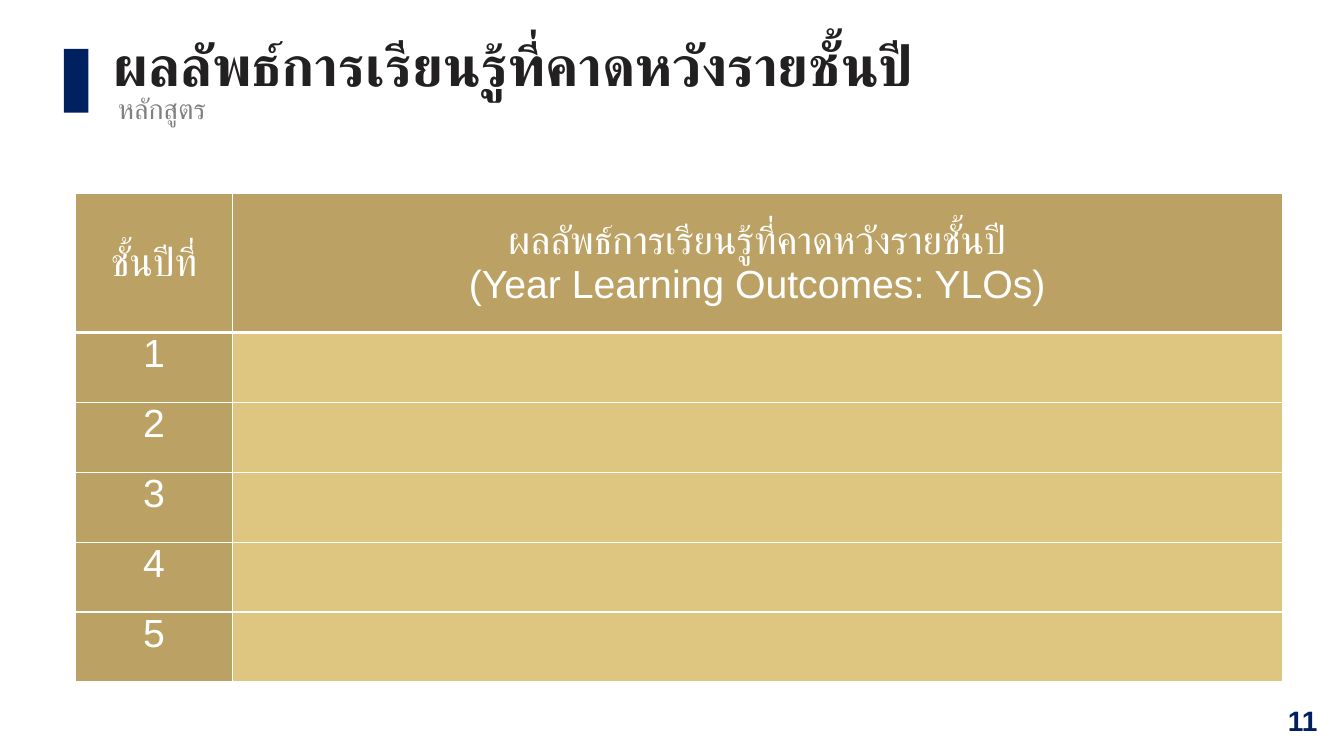
"""Build the yearly learning outcomes slide."""
from lxml import etree
from pptx import Presentation
from pptx.dml.color import RGBColor
from pptx.enum.shapes import MSO_SHAPE
from pptx.enum.text import MSO_ANCHOR, PP_ALIGN
from pptx.oxml.ns import qn
from pptx.util import Cm, Pt

RECTANGLE = MSO_SHAPE.RECTANGLE
TOP, MIDDLE = MSO_ANCHOR.TOP, MSO_ANCHOR.MIDDLE
LEFT, CENTER, RIGHT = PP_ALIGN.LEFT, PP_ALIGN.CENTER, PP_ALIGN.RIGHT

FONT = "Arial"
NAVY, WHITE, BLACK, GRAY = "002060", "FFFFFF", "222020", "808080"
GOLD, LIGHT_GOLD = "BCA164", "DBBF73"

TITLE = "ผลลัพธ์การเรียนรู้ที่คาดหวังรายชั้นปี"
YEARS = range(1, 6)
COLUMN_WIDTHS = (3.94, 26.46)
HEADER_HEIGHT, YEAR_HEIGHT = 3.5, 1.76


def set_color(color_format, color):
    """Apply a hex colour to a fill colour or font colour."""
    color_format.rgb = RGBColor.from_string(color)


def set_fill(fill, color, opacity=100):
    """Make a fill solid, with an opacity in percent."""
    fill.solid()
    set_color(fill.fore_color, color)
    if opacity < 100:
        color_element = fill._xPr.find(qn("a:solidFill"))[0]
        etree.SubElement(color_element, qn("a:alpha"), val=str(opacity * 1000))


def write_lines(text_frame, lines, size, color, align=LEFT, bold=False):
    """Write one paragraph per line, in one font."""
    for index, line in enumerate(lines):
        paragraph = text_frame.add_paragraph() if index else text_frame.paragraphs[0]
        paragraph.alignment = align
        run = paragraph.add_run()
        run.text = line
        run.font.name = FONT
        run.font.size = Pt(size)
        run.font.bold = bold
        set_color(run.font.color, color)
        etree.SubElement(run.font._element, qn("a:cs"), typeface=FONT)


def add_text(slide, box, text, size, color, align=LEFT, anchor=TOP, bold=False):
    """Add a wrapped text box at left, top, width, height."""
    text_frame = slide.shapes.add_textbox(*map(Cm, box)).text_frame
    text_frame.word_wrap = True
    text_frame.vertical_anchor = anchor
    write_lines(text_frame, [text], size, color, align, bold)


def add_bar(slide, box, color):
    """Add a plain rectangle without an outline."""
    shape = slide.shapes.add_shape(RECTANGLE, *map(Cm, box))
    shape.shadow.inherit = False
    set_fill(shape.fill, color)
    shape.line.fill.background()


def set_borders(cell, color, bottom_width=1):
    """Draw the four borders of a table cell."""
    properties = cell._tc.get_or_add_tcPr()
    widths = {"a:lnL": 1, "a:lnR": 1, "a:lnT": 1, "a:lnB": bottom_width}
    for tag, width in widths.items():
        line = etree.SubElement(properties, qn(tag), w=str(Pt(width)))
        solid = etree.SubElement(line, qn("a:solidFill"))
        etree.SubElement(solid, qn("a:srgbClr"), val=color)


def fill_cell(cell, lines, color, anchor=TOP, opacity=100, bottom_width=1):
    """Style a table cell and write its lines."""
    set_borders(cell, WHITE, bottom_width)
    set_fill(cell.fill, color, opacity)
    cell.vertical_anchor = anchor
    cell.margin_left = cell.margin_right = Cm(0.18)
    cell.margin_top = cell.margin_bottom = Cm(0)
    write_lines(cell.text_frame, lines, 28, WHITE, CENTER)


def add_outcomes_table(slide):
    """Add the table with a header and one row per year."""
    row_heights = [HEADER_HEIGHT] + [YEAR_HEIGHT] * len(YEARS)
    table = slide.shapes.add_table(
        len(row_heights), len(COLUMN_WIDTHS), Cm(1.91), Cm(4.88),
        Cm(sum(COLUMN_WIDTHS)), Cm(sum(row_heights))).table
    table.first_row = table.horz_banding = False
    for column, width in zip(table.columns, COLUMN_WIDTHS):
        column.width = Cm(width)
    for row, height in zip(table.rows, row_heights):
        row.height = Cm(height)

    headers = (["ชั้นปีที่"], [TITLE, "(Year Learning Outcomes: YLOs)"])
    for column, lines in enumerate(headers):
        fill_cell(table.cell(0, column), lines, GOLD, MIDDLE, bottom_width=3)
    for year in YEARS:
        fill_cell(table.cell(year, 0), [str(year)], GOLD)
        fill_cell(table.cell(year, 1), [], LIGHT_GOLD, opacity=90)


def main():
    """Build and save the presentation."""
    presentation = Presentation()
    presentation.slide_width, presentation.slide_height = Cm(33.87), Cm(19.05)
    slide = presentation.slides.add_slide(presentation.slide_layouts[6])
    add_bar(slide, (1.61, 1.23, 0.62, 1.61), NAVY)
    add_text(slide, (25.83, 17.65, 7.62, 1.02), "11", 20, NAVY, RIGHT, MIDDLE, bold=True)
    add_text(slide, (2.62, 0.64, 26.26, 2.11), TITLE, 40, BLACK, bold=True)
    add_text(slide, (2.72, 2.18, 12.09, 1.12), "หลักสูตร", 20, GRAY)
    add_outcomes_table(slide)
    presentation.save("out.pptx")


if __name__ == "__main__":
    main()
